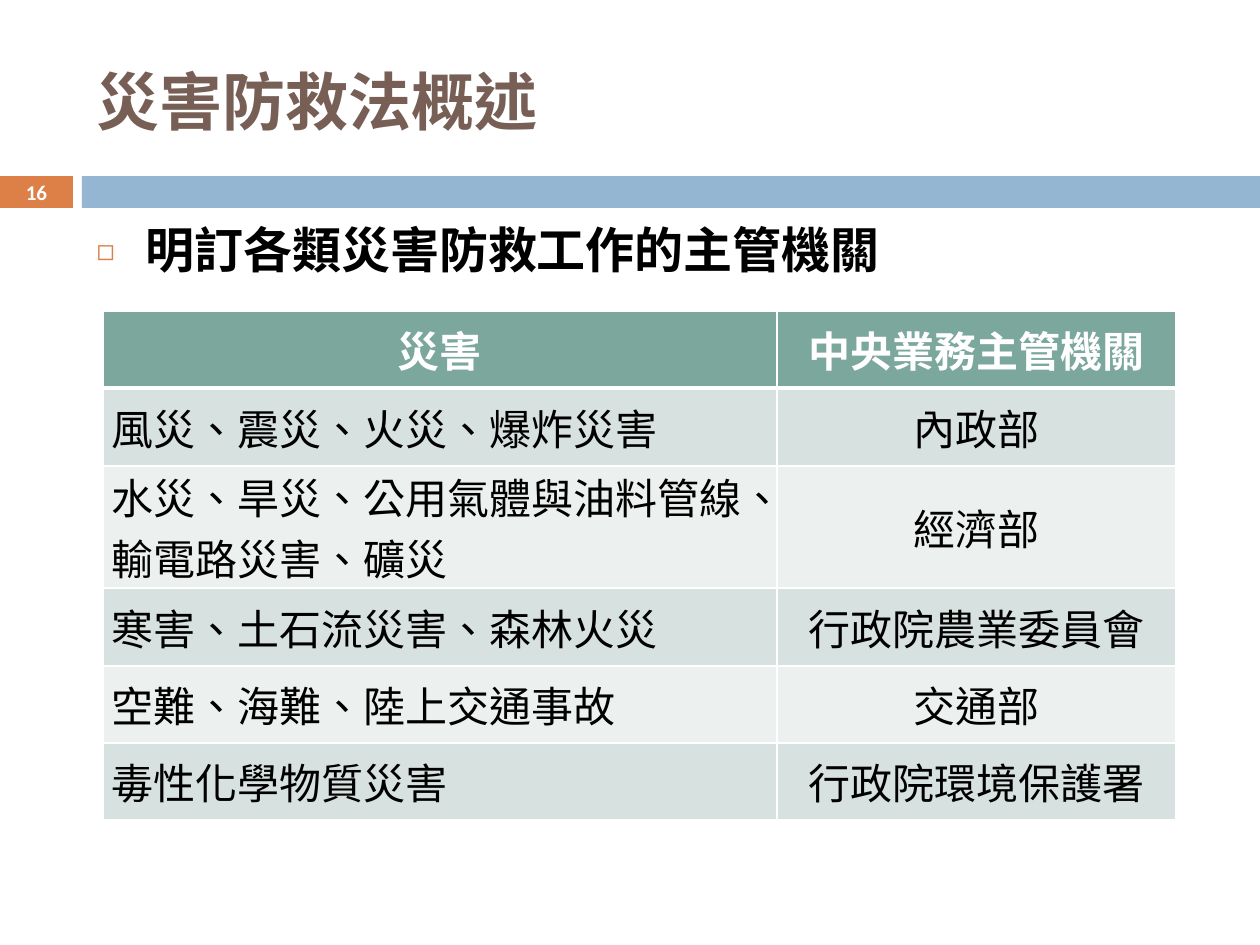
from lxml.etree import SubElement
from pptx import Presentation
from pptx.dml.color import RGBColor
from pptx.enum.shapes import MSO_SHAPE
from pptx.enum.text import MSO_ANCHOR, MSO_AUTO_SIZE, PP_ALIGN
from pptx.oxml.ns import qn
from pptx.util import Emu, Pt

SCALE = 914400 / 126
CJK = "Noto Sans CJK SC"
COLORS = {
    "white": "FFFFFF",
    "black": "000000",
    "brown": "775F55",
    "orange": "DD8047",
    "blue": "94B6D2",
    "header": "7BA79D",
    "odd": "D7E1DF",
    "even": "ECF1EF",
}
ROWS = [
    ("災害", "中央業務主管機關"),
    ("風災、震災、火災、爆炸災害", "內政部"),
    ("水災、旱災、公用氣體與油料管線、輸電路災害、礦災", "經濟部"),
    ("寒害、土石流災害、森林火災", "行政院農業委員會"),
    ("空難、海難、陸上交通事故", "交通部"),
    ("毒性化學物質災害", "行政院環境保護署"),
]
COLUMN_WIDTHS = [674, 399]
ROW_HEIGHTS = [77, 78, 122, 78, 77, 77]


def px(length):
    return Emu(round(length * SCALE))


def color(name):
    return RGBColor.from_string(COLORS[name])


def apply(target, values):
    for name, value in values.items():
        setattr(target, name, value)


def place(shape, left, top, width, height):
    apply(shape, {"left": px(left), "top": px(top), "width": px(width), "height": px(height)})


def write(frame, text, size, tone, bold=True, align=PP_ALIGN.LEFT, font=CJK):
    para = frame.paragraphs[0]
    para.alignment = align
    span = para.add_run()
    span.text = text
    span.font.color.rgb = color(tone)
    apply(span.font, {"size": Pt(size), "bold": bold, "name": font})
    properties = span.font._element
    properties.set("lang", "zh-TW")
    SubElement(properties, qn("a:ea"), typeface=CJK)
    return para


def add_bar(page, left, width, tone):
    bar = page.shapes.add_shape(MSO_SHAPE.RECTANGLE, px(left), px(176), px(width), px(32))
    bar.shadow.inherit = False
    bar.fill.solid()
    bar.fill.fore_color.rgb = color(tone)
    bar.line.fill.background()


def add_page_number(page, number):
    box = page.shapes.add_textbox(px(0), px(175), px(73), px(34))
    frame = box.text_frame
    apply(frame, {"word_wrap": True, "vertical_anchor": MSO_ANCHOR.MIDDLE,
                  "margin_top": 0, "margin_bottom": 0})
    write(frame, number, 12, "white", align=PP_ALIGN.CENTER, font="Calibri")


def fill_title(title, text):
    place(title, 84, 32, 1124, 136)
    apply(title.text_frame, {"vertical_anchor": MSO_ANCHOR.MIDDLE, "auto_size": MSO_AUTO_SIZE.NONE})
    write(title.text_frame, text, 36, "brown")


def fill_body(body, text):
    place(body, 84, 213, 1091, 80)
    apply(body.text_frame, {"vertical_anchor": MSO_ANCHOR.TOP, "auto_size": MSO_AUTO_SIZE.NONE})
    para = write(body.text_frame, text, 28, "black")
    para.space_before = Pt(7)
    properties = para._p.get_or_add_pPr()
    properties.set("marL", str(px(49)))
    properties.set("indent", str(px(-49)))
    tint = SubElement(properties, qn("a:buClr"))
    SubElement(tint, qn("a:srgbClr"), val=COLORS["orange"])
    SubElement(properties, qn("a:buSzPct"), val="60000")
    SubElement(properties, qn("a:buFont"), typeface=CJK)
    SubElement(properties, qn("a:buChar"), char="◻")


def set_borders(cell, widths):
    properties = cell._tc.get_or_add_tcPr()
    for index, (side, width) in enumerate(widths.items()):
        line = properties.makeelement(qn(f"a:ln{side}"), {"w": str(Pt(width))})
        fill = SubElement(line, qn("a:solidFill"))
        SubElement(fill, qn("a:srgbClr"), val=COLORS["white"])
        properties.insert(index, line)


def fill_cell(cell, text, row, column):
    is_header = row == 0
    tone = "header" if is_header else "odd" if row % 2 else "even"
    cell.fill.solid()
    cell.fill.fore_color.rgb = color(tone)
    apply(cell, {"vertical_anchor": MSO_ANCHOR.MIDDLE, "margin_left": px(9),
                 "margin_right": px(9), "margin_top": 0, "margin_bottom": 0})
    align = PP_ALIGN.CENTER if is_header or column else PP_ALIGN.LEFT
    write(cell.text_frame, text, 24, "white" if is_header else "black",
          bold=is_header, align=align, font="Calibri")
    set_borders(cell, {"L": 1, "R": 1, "T": 3 if row == 1 else 1, "B": 3 if is_header else 1})


def add_agency_table(page):
    table = page.shapes.add_table(len(ROWS), len(COLUMN_WIDTHS), px(103), px(311),
                                  px(sum(COLUMN_WIDTHS)), px(sum(ROW_HEIGHTS))).table
    for column, width in zip(table.columns, COLUMN_WIDTHS):
        column.width = px(width)
    for row, height in zip(table.rows, ROW_HEIGHTS):
        row.height = px(height)
    for row, texts in enumerate(ROWS):
        for column, text in enumerate(texts):
            fill_cell(table.cell(row, column), text, row, column)


def main():
    deck = Presentation()
    apply(deck, {"slide_width": px(1260), "slide_height": px(945)})
    page = deck.slides.add_slide(deck.slide_layouts[1])
    add_bar(page, 0, 73, "orange")
    add_bar(page, 82, 1178, "blue")
    add_page_number(page, "16")
    add_agency_table(page)
    fill_title(page.shapes.title, "災害防救法概述")
    fill_body(page.placeholders[1], "明訂各類災害防救工作的主管機關")
    deck.save("out.pptx")


if __name__ == "__main__":
    main()
